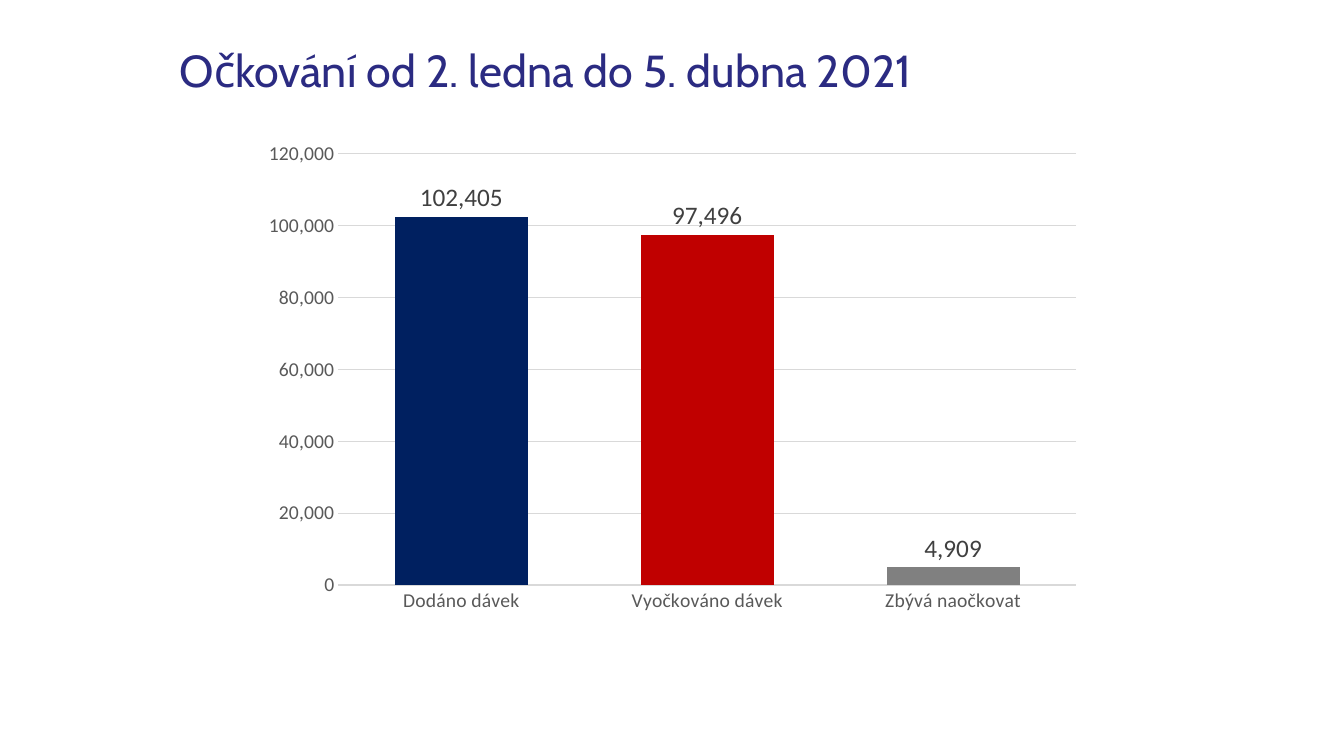
import pptx
import pptx.util
from pptx.chart.data import CategoryChartData
from pptx.dml.color import RGBColor
from pptx.enum.chart import XL_CHART_TYPE, XL_LABEL_POSITION, XL_TICK_MARK
from pptx.enum.text import MSO_ANCHOR

TITLE = "Očkování od 2. ledna do 5. dubna 2021"
DOSES = [
    ("Dodáno dávek", 102405, "002060"),
    ("Vyočkováno dávek", 97496, "C00000"),
    ("Zbývá naočkovat", 4909, "808080"),
]
THEME = {
    "title": {"name": "Cabin", "size": 32, "color": "2B2B82"},
    "base": {"name": "Calibri", "size": 10, "color": "000000"},
    "axis": {"name": "Calibri", "size": 14, "color": "595959"},
    "label": {"name": "Calibri", "size": 18, "color": "404040"},
    "rule": "D9D9D9",
}
NUMBER_FORMAT = "#,##0"
SLIDE_SIZE = (13.33, 7.5)
# Shares of the slide's size: left, top, width, height
TITLE_AREA = (0.1185, 0.0253, 0.802, 0.1427)
CHART_AREA = (0.1875, 0.1747, 0.6257, 0.6493)


def place(area):
    """Turn shares of the slide into lengths."""
    return [pptx.util.Inches(share * SLIDE_SIZE[i % 2]) for i, share in enumerate(area)]


def style_font(font, role):
    style = THEME[role]
    for attribute, value in {"name": style["name"], "size": pptx.util.Pt(style["size"])}.items():
        setattr(font, attribute, value)
    font.color.rgb = RGBColor.from_string(style["color"])


def style_line(line, width):
    line.color.rgb = RGBColor.from_string(THEME["rule"])
    line.width = pptx.util.Pt(width)


def add_title(slide):
    frame = slide.shapes.add_textbox(*place(TITLE_AREA)).text_frame
    settings = {
        "word_wrap": True,
        "vertical_anchor": MSO_ANCHOR.MIDDLE,
        "margin_left": pptx.util.Inches(0.2),
    }
    for attribute, value in settings.items():
        setattr(frame, attribute, value)
    heading = frame.paragraphs[0]
    heading.line_spacing = 0.9
    run = heading.add_run()
    run.text = TITLE
    style_font(run.font, "title")


def add_doses_chart(slide):
    names, counts, colors = zip(*DOSES)
    data = CategoryChartData(number_format=NUMBER_FORMAT)
    data.categories = names
    data.add_series("Series 1", counts)
    chart = slide.shapes.add_chart(
        XL_CHART_TYPE.COLUMN_CLUSTERED, *place(CHART_AREA), data
    ).chart
    chart.has_legend = chart.has_title = False
    style_font(chart.font, "base")

    for axis in (chart.category_axis, chart.value_axis):
        axis.major_tick_mark = axis.minor_tick_mark = XL_TICK_MARK.NONE
        style_font(axis.tick_labels.font, "axis")
    style_line(chart.category_axis.format.line, 1)
    chart.value_axis.format.line.fill.background()
    chart.value_axis.has_major_gridlines = True
    style_line(chart.value_axis.major_gridlines.format.line, 0.75)

    plot = chart.plots[0]
    for attribute, value in {"gap_width": 85, "overlap": -24, "vary_by_categories": False}.items():
        setattr(plot, attribute, value)
    doses = plot.series[0]
    for index, color in enumerate(colors):
        fill = doses.points[index].format.fill
        fill.solid()
        fill.fore_color.rgb = RGBColor.from_string(color)

    labels = doses.data_labels
    label_settings = {
        "show_value": True,
        "position": XL_LABEL_POSITION.OUTSIDE_END,
        "number_format": NUMBER_FORMAT,
        "number_format_is_linked": False,
    }
    for attribute, value in label_settings.items():
        setattr(labels, attribute, value)
    style_font(labels.font, "label")

    value_settings = {"number_format": NUMBER_FORMAT, "number_format_is_linked": False}
    for attribute, value in value_settings.items():
        setattr(chart.value_axis.tick_labels, attribute, value)


def main():
    deck = pptx.Presentation()
    deck.slide_width, deck.slide_height = map(pptx.util.Inches, SLIDE_SIZE)
    slide = deck.slides.add_slide(deck.slide_layouts[6])
    add_title(slide)
    add_doses_chart(slide)
    deck.save("out.pptx")


if __name__ == "__main__":
    main()
